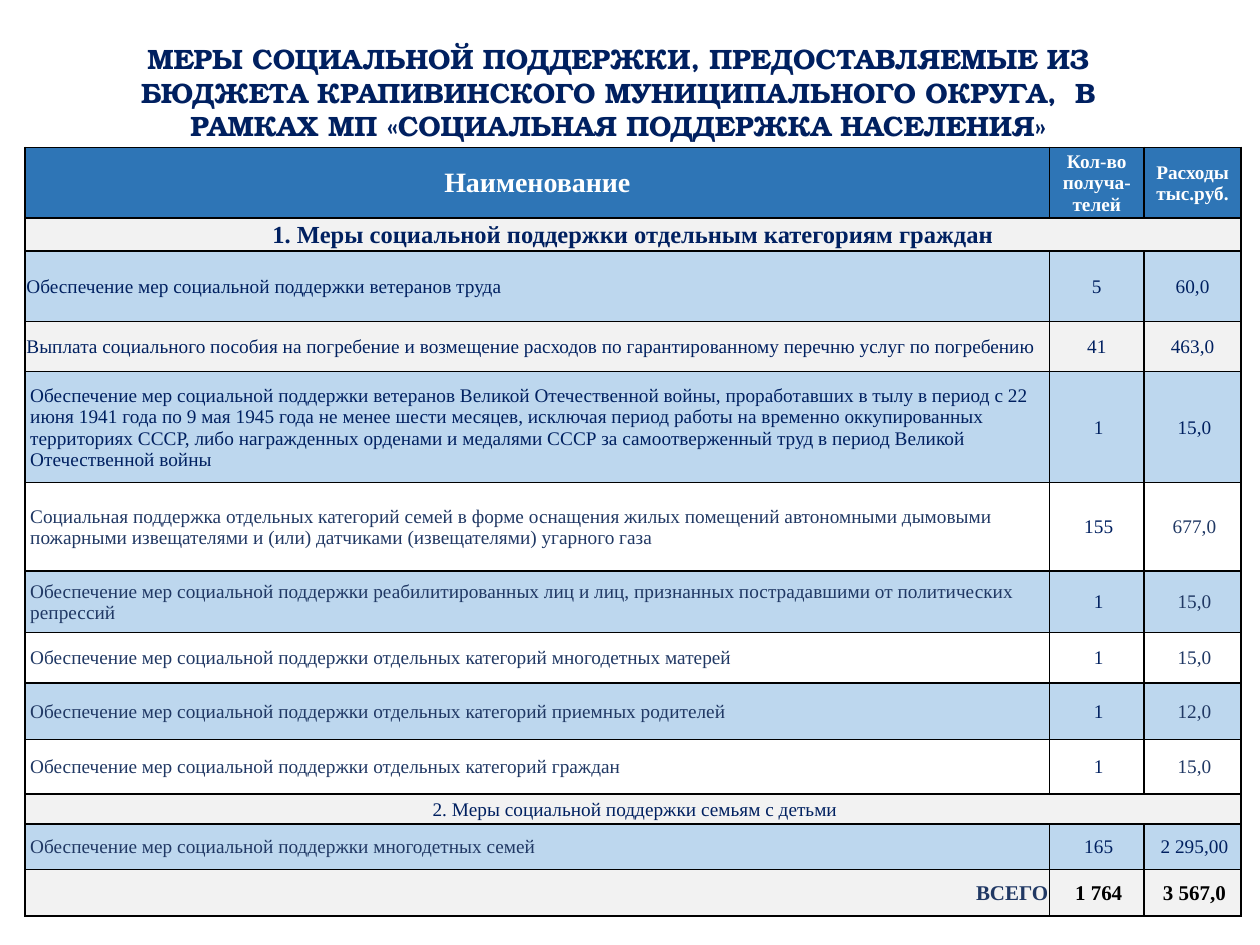
from lxml.etree import SubElement as Sub
from pptx import Presentation
from pptx.dml.color import RGBColor
from pptx.enum.text import MSO_ANCHOR as Anchor, PP_ALIGN as Align
from pptx.oxml.ns import qn
from pptx.util import Inches, Pt

WHITE = RGBColor(0xFF, 0xFF, 0xFF)
BLACK = RGBColor(0, 0, 0)
NAVY = RGBColor(0x00, 0x20, 0x60)
SLATE = RGBColor(0x20, 0x38, 0x64)
BLUE = RGBColor(0x2E, 0x75, 0xB6)
SKY = RGBColor(0xBD, 0xD7, 0xEE)
GREY = RGBColor(0xF2, 0xF2, 0xF2)

SERIF = "Times New Roman"
TITLE = ("МЕРЫ СОЦИАЛЬНОЙ ПОДДЕРЖКИ, ПРЕДОСТАВЛЯЕМЫЕ ИЗ БЮДЖЕТА "
         "КРАПИВИНСКОГО МУНИЦИПАЛЬНОГО ОКРУГА,  В РАМКАХ МП "
         "«СОЦИАЛЬНАЯ ПОДДЕРЖКА НАСЕЛЕНИЯ»")
COLS = (8.13, 0.75, 0.77)
TIGHT, WIDE = 0.01, 0.04

# Looks of a row: alignment of the name, text colours, sizes, weight
HEAD = {"align": Align.CENTER, "inks": (WHITE,) * 3, "sizes": (16, 11, 11), "bold": True}
PART = {"align": Align.CENTER, "inks": (NAVY,), "sizes": (14,), "bold": True}
SUB = {"align": Align.CENTER, "inks": (NAVY,), "sizes": (11,), "bold": False}
EVEN = {"align": Align.JUSTIFY, "inks": (NAVY,) * 3, "sizes": (11,) * 3, "bold": False}
LEFT = EVEN | {"align": Align.LEFT}
MIXED = LEFT | {"inks": (SLATE, NAVY, SLATE)}
KIDS = EVEN | {"inks": (SLATE, NAVY, NAVY)}
TOTAL = {"align": Align.RIGHT, "inks": (SLATE, BLACK, BLACK), "sizes": (12,) * 3, "bold": True}

# Height, look, fill, left inset, texts; a single text spans the row
ROWS = (
    (0.55, HEAD, BLUE, TIGHT, ("Наименование", "Кол-во получа-телей", "Расходы тыс.руб.")),
    (0.26, PART, GREY, TIGHT, ("1. Меры социальной поддержки отдельным категориям граждан",)),
    (0.56, EVEN, SKY, TIGHT,
     ("Обеспечение мер социальной поддержки ветеранов труда", "5", "60,0")),
    (0.4, EVEN, GREY, TIGHT,
     ("Выплата социального пособия на погребение и возмещение расходов "
      "по гарантированному перечню услуг по погребению", "41", "463,0")),
    (0.88, LEFT, SKY, WIDE,
     ("Обеспечение мер социальной поддержки ветеранов Великой Отечественной войны, "
      "проработавших в тылу в период с 22 июня 1941 года по 9 мая 1945 года не менее "
      "шести месяцев, исключая период работы на временно оккупированных территориях "
      "СССР, либо награжденных орденами и медалями СССР за самоотверженный труд "
      "в период Великой Отечественной войны", "1", "15,0")),
    (0.7, MIXED, WHITE, WIDE,
     ("Социальная поддержка отдельных категорий семей в форме оснащения жилых "
      "помещений автономными дымовыми пожарными извещателями и (или) датчиками "
      "(извещателями) угарного газа", "155", "677,0")),
    (0.49, MIXED, SKY, WIDE,
     ("Обеспечение мер социальной поддержки реабилитированных лиц и лиц, "
      "признанных пострадавшими от политических репрессий", "1", "15,0")),
    (0.4, MIXED, WHITE, WIDE,
     ("Обеспечение мер социальной поддержки отдельных категорий многодетных матерей",
      "1", "15,0")),
    (0.45, MIXED, SKY, WIDE,
     ("Обеспечение мер социальной поддержки отдельных категорий приемных родителей",
      "1", "12,0")),
    (0.43, MIXED, WHITE, WIDE,
     ("Обеспечение мер социальной поддержки отдельных категорий граждан", "1", "15,0")),
    (0.24, SUB, GREY, WIDE, ("2. Меры социальной поддержки семьям с детьми",)),
    (0.36, KIDS, SKY, WIDE,
     ("Обеспечение мер социальной поддержки многодетных семей", "165", "2 295,00")),
    (0.37, TOTAL, GREY, WIDE, ("ВСЕГО", "1 764", "3 567,0")),
)


def assign(obj, **values):
    for name, value in values.items():
        setattr(obj, name, value)


def write(frame, text, align, ink, **font):
    par = frame.paragraphs[0]
    par.alignment = align
    run = par.add_run()
    run.text = text
    assign(run.font, **font)
    run.font.color.rgb = ink


def paint(obj, tone):
    obj.fill.solid()
    obj.fill.fore_color.rgb = tone


def frame_cell(cell):
    """Draw a thin black line on all four sides."""
    props = cell._tc.get_or_add_tcPr()
    for side in ("lnL", "lnR", "lnT", "lnB"):
        line = Sub(props, qn("a:" + side), w=str(Pt(1)))
        Sub(Sub(line, qn("a:solidFill")), qn("a:srgbClr"), val=str(BLACK))


def add_title(slide):
    box = slide.shapes.add_textbox(Inches(0.87), Inches(0.28), Inches(8.08), Inches(0.91))
    paint(box, WHITE)
    box.text_frame.word_wrap = True
    write(box.text_frame, TITLE, Align.CENTER, NAVY,
          name="TeX Gyre Bonum", size=Pt(16), bold=True)


def fill_row(table, num, row):
    height, look, tone, inset, texts = row
    table.rows[num].height = Inches(height)
    if len(texts) == 1:
        table.cell(num, 0).merge(table.cell(num, len(COLS) - 1))
    for col, (text, ink, size) in enumerate(zip(texts, look["inks"], look["sizes"])):
        cell = table.cell(num, col)
        assign(cell, margin_left=Inches(inset), margin_top=Inches(0.01),
               margin_right=Inches(0.01), margin_bottom=0,
               vertical_anchor=Anchor.MIDDLE)
        frame_cell(cell)
        paint(cell, tone)
        write(cell.text_frame, text, Align.CENTER if col else look["align"], ink,
              name=SERIF, size=Pt(size), bold=look["bold"])


def add_grid(slide):
    high = sum(row[0] for row in ROWS)
    table = slide.shapes.add_table(len(ROWS), len(COLS), Inches(0.2), Inches(1.17),
                                   Inches(sum(COLS)), Inches(high)).table
    assign(table, first_row=False, horz_banding=False)
    for col, width in zip(table.columns, COLS):
        col.width = Inches(width)
    for num, row in enumerate(ROWS):
        fill_row(table, num, row)


def main():
    deck = Presentation()
    assign(deck, slide_width=Inches(10), slide_height=Inches(7.5))
    slide = deck.slides.add_slide(deck.slide_layouts[6])
    add_title(slide)
    add_grid(slide)
    deck.save("out.pptx")


if __name__ == "__main__":
    main()
